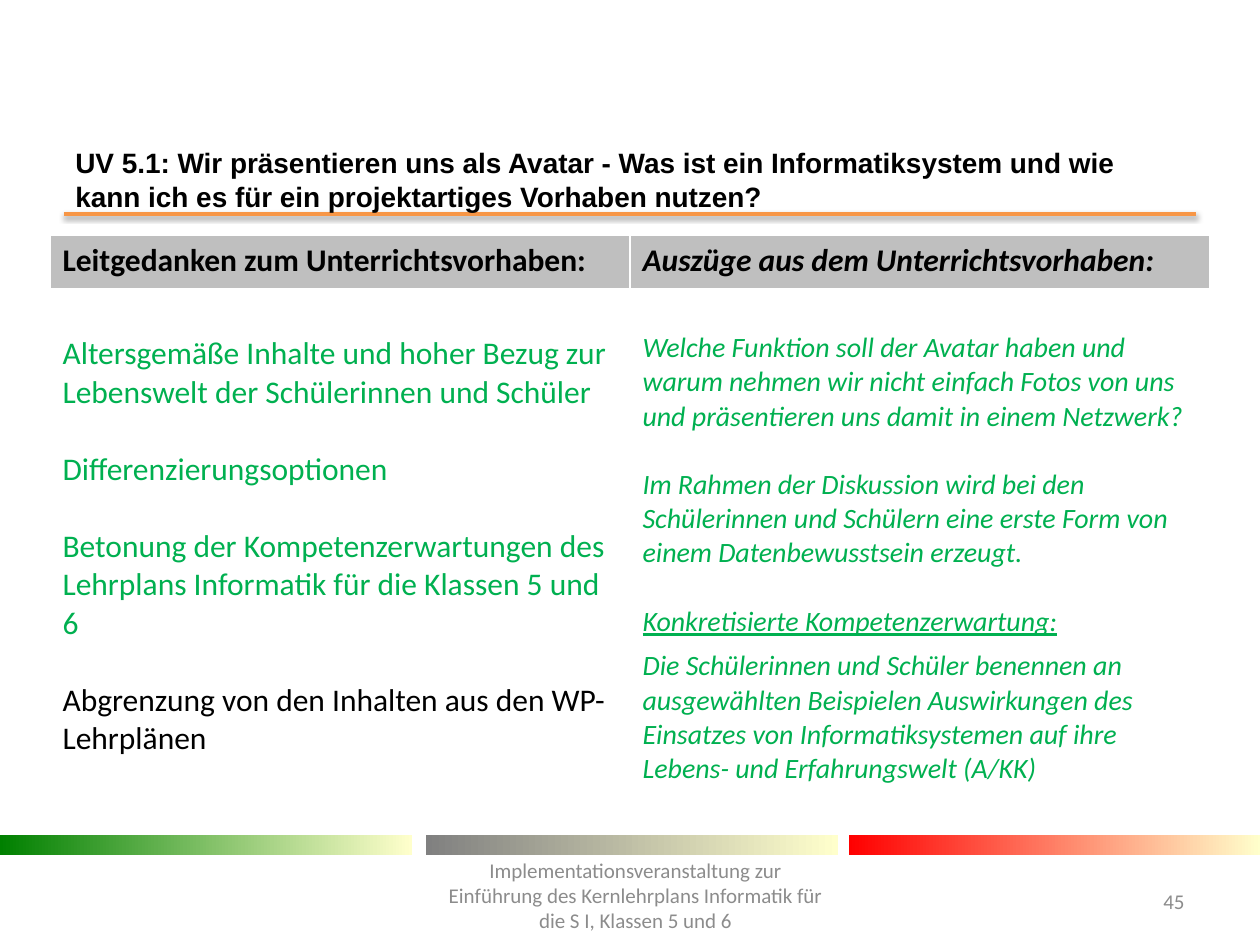
"""Build the slide on teaching unit 5.1 with its two-column table."""
import lxml.etree
import pptx
import pptx.dml.color
import pptx.enum.shapes
import pptx.enum.text
import pptx.oxml
import pptx.oxml.ns
import pptx.util

RGBColor = pptx.dml.color.RGBColor
BLACK = RGBColor(0x00, 0x00, 0x00)
GREEN = RGBColor(0x00, 0xB0, 0x50)
FOOTER_GRAY = RGBColor(0x8C, 0x8C, 0x8C)
HEADER_GRAY = RGBColor(0xBF, 0xBF, 0xBF)
ORANGE = RGBColor(0xF7, 0x96, 0x46)
CREAM = RGBColor(0xFF, 0xFF, 0xCC)

SCALE = 914400 / 126
ALIGN = pptx.enum.text.PP_ALIGN

BARS = [
    (0, RGBColor(0x00, 0x80, 0x00)),
    (426, RGBColor(0x80, 0x80, 0x80)),
    (849, RGBColor(0xFF, 0x00, 0x00)),
]
TEXTS = [
    ("UV 5.1: Wir präsentieren uns als Avatar - Was ist ein Informatiksystem und wie "
     "kann ich es für ein projektartiges Vorhaben nutzen?",
     (63, 155, 1134, 49), "Arial", 16, BLACK, True, ALIGN.LEFT),
    ("Implementationsveranstaltung zur Einführung des Kernlehrplans Informatik für "
     "die S I, Klassen 5 und 6",
     (432, 859, 407, 72), "Calibri", 12, FOOTER_GRAY, False, ALIGN.CENTER),
    ("45", (1116, 876, 81, 50), "Calibri", 12, FOOTER_GRAY, False, ALIGN.RIGHT),
]
COLUMNS = [
    {
        "header": "Leitgedanken zum Unterrichtsvorhaben:",
        "italic": False, "size": 18, "top": 45,
        "body": [
            ("Altersgemäße Inhalte und hoher Bezug zur Lebenswelt der Schülerinnen "
             "und Schüler", 0, GREEN, False),
            ("Differenzierungsoptionen", 22, GREEN, False),
            ("Betonung der Kompetenzerwartungen des Lehrplans Informatik für die "
             "Klassen 5 und 6", 22, GREEN, False),
            ("Abgrenzung von den Inhalten aus den WP-Lehrplänen", 22, BLACK, False),
        ],
    },
    {
        "header": "Auszüge aus dem Unterrichtsvorhaben:",
        "italic": True, "size": 16, "top": 41,
        "body": [
            ("Welche Funktion soll der Avatar haben und warum nehmen wir nicht einfach "
             "Fotos von uns und präsentieren uns damit in einem Netzwerk?",
             0, GREEN, False),
            ("Im Rahmen der Diskussion wird bei den Schülerinnen und Schülern eine erste "
             "Form von einem Datenbewusstsein erzeugt.", 19.5, GREEN, False),
            ("Konkretisierte Kompetenzerwartung:", 19.5, GREEN, True),
            ("Die Schülerinnen und Schüler benennen an ausgewählten Beispielen "
             "Auswirkungen des Einsatzes von Informatiksystemen auf ihre Lebens- und "
             "Erfahrungswelt (A/KK)", 6, GREEN, False),
        ],
    },
]
TABLE_BOX = (50, 235, 1160, 574)
ROW_HEIGHTS = (55, 519)
SHADOW = (
    '<a:effectLst %s><a:outerShdw blurRad="39370" dist="20320" dir="5400000">'
    '<a:srgbClr val="000000"><a:alpha val="38000"/></a:srgbClr>'
    '</a:outerShdw></a:effectLst>'
) % pptx.oxml.ns.nsdecls("a")


def px(*values):
    """Turn px lengths into EMU."""
    return [pptx.util.Emu(round(value * SCALE)) for value in values]


def set_font(paragraph, name, size, color, bold=False, italic=False, underline=False):
    """Set the font of a whole paragraph."""
    font = paragraph.font
    font.name, font.size = name, pptx.util.Pt(size)
    font.bold, font.italic, font.underline = bold, italic, underline
    font.color.rgb = color


def add_rule(slide):
    """Draw the shadowed line below the title."""
    rule = slide.shapes.add_connector(
        pptx.enum.shapes.MSO_CONNECTOR.STRAIGHT, *px(64, 214, 1196, 214))
    rule.line.color.rgb = ORANGE
    rule.line.width = pptx.util.Pt(2)
    rule._element.spPr.append(pptx.oxml.parse_xml(SHADOW))


def add_bar(slide, left, color):
    """Draw one gradient bar above the footer."""
    bar = slide.shapes.add_shape(
        pptx.enum.shapes.MSO_SHAPE.RECTANGLE, *px(left, 835, 412, 20))
    bar.shadow.inherit = False
    bar.line.fill.background()
    bar.fill.gradient()
    bar.fill.gradient_angle = 0
    for stop, stop_color in zip(bar.fill.gradient_stops, (color, CREAM)):
        stop.color.rgb = stop_color


def add_text(slide, text, box, name, size, color, bold, alignment):
    """Add a vertically centred text box."""
    frame = slide.shapes.add_textbox(*px(*box)).text_frame
    frame.word_wrap = True
    frame.vertical_anchor = pptx.enum.text.MSO_ANCHOR.MIDDLE
    paragraph = frame.paragraphs[0]
    paragraph.text = text
    paragraph.alignment = alignment
    set_font(paragraph, name, size, color, bold)


def set_borders(cell, bottom_width):
    """Give a cell white borders."""
    properties = cell._tc.get_or_add_tcPr()
    widths = {"lnL": 1, "lnR": 1, "lnT": 1, "lnB": bottom_width}
    for index, (tag, width) in enumerate(widths.items()):
        properties.insert(index, pptx.oxml.parse_xml(
            '<a:%s %s w="%d"><a:solidFill><a:srgbClr val="FFFFFF"/></a:solidFill></a:%s>'
            % (tag, pptx.oxml.ns.nsdecls("a"), pptx.util.Pt(width), tag)))


def add_unit_table(slide):
    """Add the table of guiding ideas and excerpts."""
    table = slide.shapes.add_table(2, len(COLUMNS), *px(*TABLE_BOX)).table
    table.horz_banding = False
    for row, height in zip(table.rows, px(*ROW_HEIGHTS)):
        row.height = height
    for index, column in enumerate(COLUMNS):
        header, body = table.cell(0, index), table.cell(1, index)
        header.fill.solid()
        header.fill.fore_color.rgb = HEADER_GRAY
        body.fill.background()
        set_borders(header, 3)
        set_borders(body, 1)
        header.text = column["header"]
        set_font(header.text_frame.paragraphs[0], "Calibri", 18, BLACK, True,
                 column["italic"])
        body.margin_top = px(column["top"])[0]
        body.text = "\n".join(entry[0] for entry in column["body"])
        for paragraph, (_, space, color, underline) in zip(
                body.text_frame.paragraphs, column["body"]):
            if space:
                paragraph.space_before = pptx.util.Pt(space)
            set_font(paragraph, "Calibri", column["size"], color, False,
                     column["italic"], underline)


def main():
    """Build and save the presentation."""
    presentation = pptx.Presentation()
    presentation.slide_width, presentation.slide_height = px(1260, 945)
    slide = presentation.slides.add_slide(presentation.slide_layouts[6])
    add_rule(slide)
    for left, color in BARS:
        add_bar(slide, left, color)
    for entry in TEXTS:
        add_text(slide, *entry)
    add_unit_table(slide)
    presentation.save("out.pptx")


if __name__ == "__main__":
    main()
